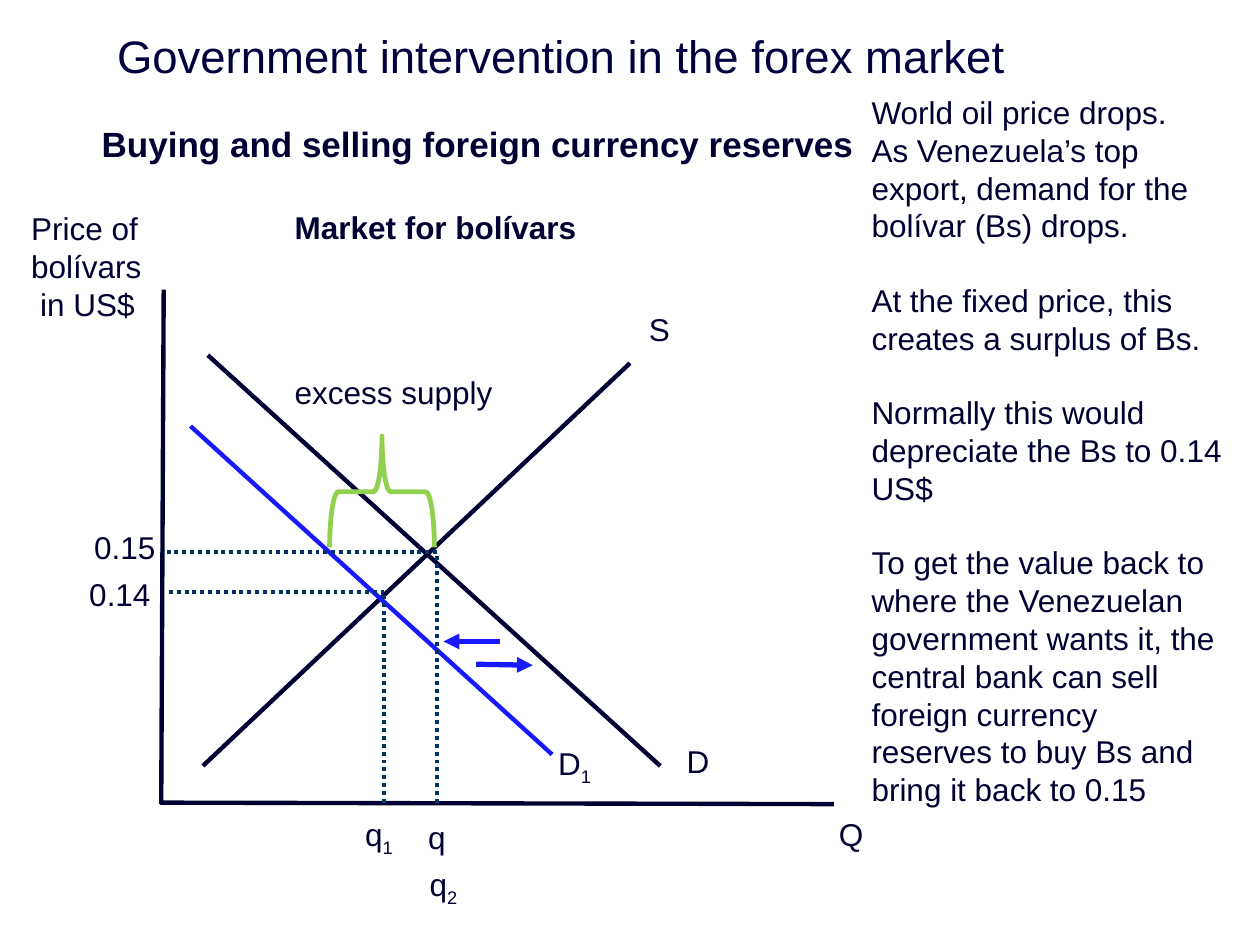
import pptx
import pptx.dml.color
import pptx.enum.dml
import pptx.enum.shapes
import pptx.enum.text
import pptx.oxml.ns
import pptx.util
from lxml import etree

Cm, Pt = pptx.util.Cm, pptx.util.Pt
COLORS = {"title": "00003E", "ink": "000032", "guide": "003366",
          "shift": "1919FF", "brace": "92D050"}
LABEL_H = 1.02
AXIS_X, AXIS_Y = 3.35, 16.18
FIXED_PRICE, NEW_PRICE = 11.13, 11.94
FIXED_Q, NEW_Q = 8.81, 7.75

LABELS = [
    ("Q", "", 16.66, 16.31, 1.63),
    ("S", "", 12.83, 6.12, 1.55),
    ("D", "", 13.59, 14.83, 1.55),
    ("D", "1", 11, 14.88, 1.55),
    ("q", "", 8.38, 16.36, 1.12),
    ("q", "1", 7.11, 16.31, 1.12),
    ("q", "2", 8.41, 17.32, 1.12),
    ("0.15", "", 1.65, 10.52, 1.9),
    ("0.14", "", 1.55, 11.46, 1.9),
    ("excess supply", "", 5.69, 7.39, 5.16),
]
CURVES = [
    ("ink", (16.81, 16.21, 3.23, 16.18)),
    ("ink", (3.3, 5.84, 3.25, 16.21)),
    ("ink", (12.7, 7.32, 4.09, 15.44)),
    ("ink", (4.19, 7.16, 13.31, 15.44)),
    ("shift", (3.84, 8.59, 11.13, 15.21)),
]
SHIFTS = [(10.08, 12.93, 8.94, 12.93), (9.6, 13.39, 10.74, 13.41)]
NOTES = [
    "World oil price drops.",
    "As Venezuela’s top export, demand for the bolívar (Bs) drops.",
    "At the fixed price, this creates a surplus of Bs.",
    "Normally this would depreciate the Bs to 0.14 US$",
    "To get the value back to where the Venezuelan government wants it, the central bank "
    "can sell foreign currency reserves to buy Bs and bring it back to 0.15",
]


def rgb(name):
    """Return the named colour."""
    return pptx.dml.color.RGBColor.from_string(COLORS[name])


def add_run(p, text, color="ink", **fmt):
    """Add a formatted run to a paragraph."""
    r = p.add_run()
    r.text = text
    for key, value in {"name": "Arial", "size": Pt(18), **fmt}.items():
        setattr(r.font, key, value)
    r.font.color.rgb = rgb(color)
    return r


def add_text(s, lines, box, **fmt):
    """Add a wrapping text box and return its text frame."""
    tf = s.shapes.add_textbox(*map(Cm, box)).text_frame
    tf.word_wrap = True
    for i, line in enumerate(lines):
        p = tf.add_paragraph() if i else tf.paragraphs[0]
        add_run(p, line, **fmt)
    return tf


def add_label(s, text, sub, x, y, w):
    """Add a one-line label with an optional subscript."""
    p = add_text(s, [text], (x, y, w, LABEL_H)).paragraphs[0]
    if sub:
        r = add_run(p, sub)
        r.font._element.set("baseline", "-25000")


def add_line(s, ends, color, width=2.5, dash=None, arrow=False):
    """Add a straight line, optionally dotted or with an arrowhead."""
    sp = s.shapes.add_connector(pptx.enum.shapes.MSO_CONNECTOR.STRAIGHT, *map(Cm, ends))
    sp.line.color.rgb = rgb(color)
    for key, value in {"width": Pt(width), "dash_style": dash}.items():
        setattr(sp.line, key, value)
    qn = pptx.oxml.ns.qn
    if arrow:
        etree.SubElement(sp.line._get_or_add_ln(), qn("a:tailEnd"), type="triangle")
    etree.SubElement(sp._element.spPr, qn("a:effectLst"))


def add_brace(s, box):
    """Add the brace that spans the excess supply."""
    sp = s.shapes.add_shape(pptx.enum.shapes.MSO_SHAPE.LEFT_BRACE, *map(Cm, box))
    sp.rotation = 90
    sp.shadow.inherit = False
    sp.fill.background()
    sp.line.color.rgb = rgb("brace")
    sp.line.width = Pt(2.75)


def add_headings(s):
    """Add the title, subtitle, chart heading and price axis title."""
    tf = add_text(s, ["Government intervention in the forex market"],
                  (2.11, -0.48, 23.7, 3.18), color="title", size=Pt(26))
    tf.vertical_anchor = pptx.enum.text.MSO_ANCHOR.MIDDLE
    add_text(s, ["Buying and selling foreign currency reserves"],
             (1.8, 2.34, 23.29, 11.38), size=Pt(20), bold=True)
    add_text(s, ["Market for bolívars"], (5.69, 4.06, 9.93, LABEL_H), bold=True)
    tf = add_text(s, ["Price of bolívars", "in US$"], (0.38, 4.09, 2.92, 2.57))
    tf.paragraphs[1]._p.get_or_add_pPr().set("marL", str(Cm(0.18)))


def add_guides(s):
    """Add dotted guides from each equilibrium to both axes."""
    dot = pptx.enum.dml.MSO_LINE.ROUND_DOT
    for q, price in ((FIXED_Q, FIXED_PRICE), (NEW_Q, NEW_PRICE)):
        for ends in ((q, price, AXIS_X, price), (q, AXIS_Y, q, price)):
            add_line(s, ends, "guide", 2.25, dash=dot)


def add_notes_column(s):
    """Add the explanation beside the diagram."""
    tf = add_text(s, NOTES, (17.32, 1.75, 7.59, 14.88))
    for p in tf.paragraphs[2:]:
        p.space_before = Pt(21)


def main():
    """Build the slide and save it."""
    prs = pptx.Presentation()
    prs.slide_width, prs.slide_height = Cm(25.4), Cm(19.05)
    s = prs.slides.add_slide(prs.slide_layouts[6])
    add_headings(s)
    for color, ends in CURVES:
        add_line(s, ends, color)
    add_guides(s)
    for label in LABELS:
        add_label(s, *label)
    add_notes_column(s)
    add_brace(s, (6.58, 8.86, 2.24, 2.11))
    for ends in SHIFTS:
        add_line(s, ends, "shift", 3, arrow=True)
    prs.save("out.pptx")


if __name__ == "__main__":
    main()
